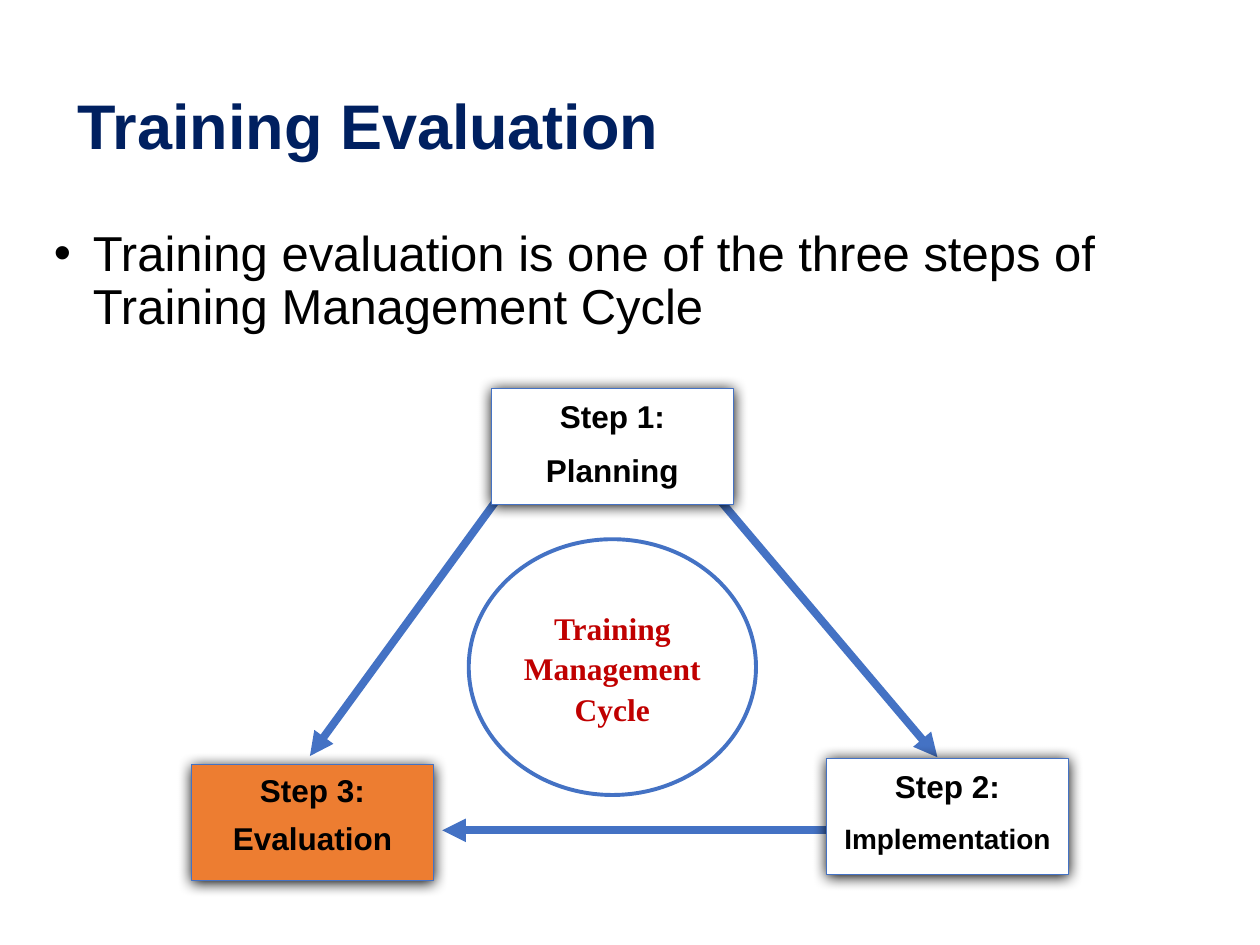
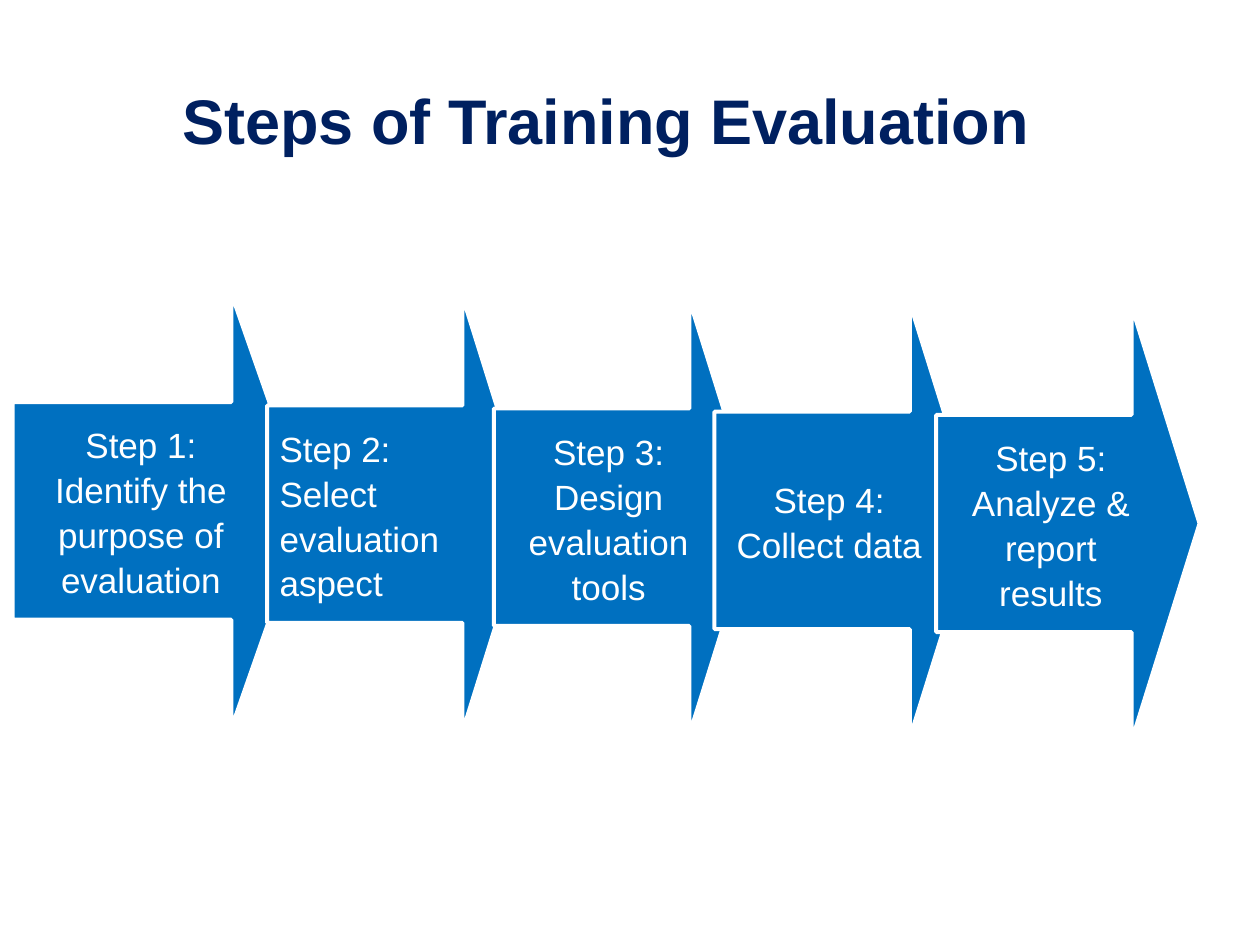
"""Build two slides on training evaluation: the management cycle and the five steps."""
import pptx
import pptx.dml.color
import pptx.enum.shapes
import pptx.enum.text
import pptx.oxml
import pptx.oxml.ns
import pptx.util
import lxml.etree

Inches = pptx.util.Inches
Pt = pptx.util.Pt
Shape = pptx.enum.shapes.MSO_SHAPE
Anchor = pptx.enum.text.MSO_ANCHOR
Align = pptx.enum.text.PP_ALIGN

COLOURS = {
    "navy": "002060", "black": "000000", "white": "FFFFFF", "line": "4472C4",
    "orange": "ED7D31", "red": "C00000", "arrow": "0070C0",
}

TITLES = [
    ("Training Evaluation", (0.52, 0.3), Align.LEFT),
    ("Steps of Training Evaluation", (0.5, 0.26), Align.CENTER),
]
TITLE_SIZE = (8.62, 1.45)
INTRO = "Training evaluation is one of the three steps of Training Management Cycle"

CYCLE_LINES = [
    ((5.68, 3.93), (7.44, 6.01)),
    ((3.97, 3.93), (2.46, 6)),
    ((6.56, 6.59), (3.51, 6.59)),
]
LOOSE = {"line_spacing": 1.07, "space_after": Pt(8)}
PLAIN = {"space_after": Pt(6)}
CYCLE_BOXES = [
    ((3.9, 3.08), "white", [("Step 1:", 18), ("Planning", 18)], LOOSE),
    ((6.56, 6.02), "white", [("Step 2:", 18), ("Implementation", 16)], LOOSE),
    ((1.52, 6.07), "orange", [("Step 3:", 18), ("Evaluation", 18)], PLAIN),
]
BOX_SIZE = (1.92, 0.92)
HUB = ("Training Management Cycle", (3.72, 4.28, 2.28, 2.03))

STEPS = [
    ("Step 1: Identify the purpose of evaluation", 0.1, 2.34, Align.CENTER),
    ("Step 2: Select evaluation aspect", 2.12, 2.09, Align.LEFT),
    ("Step 3: Design evaluation tools", 3.92, 2.09, Align.CENTER),
    ("Step 4: Collect data", 5.67, 2.09, Align.CENTER),
    ("Step 5: Analyze & report results", 7.43, 2.09, Align.CENTER),
]
ARROW_TOP, ARROW_DROP, ARROW_HEIGHT = 2.33, 0.025, 3.45
ARROW_ADJUSTMENTS = (0.5, 0.258)


def colour(name):
    return pptx.dml.color.RGBColor.from_string(COLOURS[name])


def apply(target, values):
    for name, value in values.items():
        setattr(target, name, value)


def write(shape, lines, ink, bold=False, font="Arial", anchor=Anchor.TOP, **layout):
    """Fill a shape with (text, size) lines and return the paragraphs."""
    frame = shape.text_frame
    apply(frame, {"word_wrap": True, "vertical_anchor": anchor})
    for number, (text, size) in enumerate(lines):
        para = frame.add_paragraph() if number else frame.paragraphs[0]
        apply(para, layout)
        span = para.add_run()
        span.text = text
        apply(span.font, {"name": font, "size": Pt(size), "bold": bold})
        span.font.color.rgb = colour(ink)
    return frame.paragraphs


def add_block(page, kind, place, fill, line, weight):
    block = page.shapes.add_shape(kind, *map(Inches, place))
    block.shadow.inherit = False
    block.fill.solid()
    block.fill.fore_color.rgb = colour(fill)
    block.line.color.rgb = colour(line)
    block.line.width = Pt(weight)
    return block


def add_shadow(block):
    effects = block.element.spPr.find(pptx.oxml.ns.qn("a:effectLst"))
    effects.append(pptx.oxml.parse_xml(
        f'<a:outerShdw {pptx.oxml.ns.nsdecls("a")} blurRad="{Pt(8.5)}" dist="{Pt(1)}"'
        f' dir="5400000" algn="ctr" rotWithShape="0"><a:srgbClr val="{COLOURS["black"]}"/></a:outerShdw>'))


def add_arrow_line(page, start, end):
    line = page.shapes.add_connector(
        pptx.enum.shapes.MSO_CONNECTOR.STRAIGHT, *map(Inches, start + end))
    line.line.color.rgb = colour("line")
    line.line.width = Pt(4.5)
    properties = line.element.spPr
    outline = properties.find(pptx.oxml.ns.qn("a:ln"))
    lxml.etree.SubElement(outline, pptx.oxml.ns.qn("a:tailEnd"), type="triangle")
    lxml.etree.SubElement(properties, pptx.oxml.ns.qn("a:effectLst"))


def add_page(deck, title, corner, alignment):
    page = deck.slides.add_slide(deck.slide_layouts[6])
    box = page.shapes.add_textbox(*map(Inches, corner + TITLE_SIZE))
    write(box, [(title, 36)], "navy", bold=True, anchor=Anchor.MIDDLE,
          alignment=alignment, line_spacing=0.9)
    return page


def add_intro(page):
    box = page.shapes.add_textbox(*map(Inches, (0.33, 1.77, 9, 1.17)))
    para = write(box, [(INTRO, 28)], "black", line_spacing=0.9, space_before=Pt(7.5))[0]
    properties = para._p.get_or_add_pPr()
    properties.set("marL", str(Inches(0.31)))
    properties.set("indent", str(-Inches(0.31)))
    lxml.etree.SubElement(properties, pptx.oxml.ns.qn("a:buFont"), typeface="Arial")
    lxml.etree.SubElement(properties, pptx.oxml.ns.qn("a:buChar"), char="•")


def draw_cycle(page):
    add_intro(page)
    for start, end in CYCLE_LINES:
        add_arrow_line(page, start, end)
    for corner, fill, lines, spacing in CYCLE_BOXES:
        box = add_block(page, Shape.RECTANGLE, corner + BOX_SIZE, fill, "line", 0.5)
        add_shadow(box)
        write(box, lines, "black", bold=True, alignment=Align.CENTER, **spacing)
    text, place = HUB
    hub = add_block(page, Shape.OVAL, place, "white", "line", 2.25)
    write(hub, [(text, 18)], "red", bold=True, font="Times New Roman",
          anchor=Anchor.MIDDLE, alignment=Align.CENTER, **LOOSE)


def draw_steps(page):
    for number, (text, left, width, alignment) in enumerate(STEPS):
        place = (left, ARROW_TOP + number * ARROW_DROP, width, ARROW_HEIGHT)
        arrow = add_block(page, Shape.RIGHT_ARROW, place, "arrow", "white", 2.25)
        for index, value in enumerate(ARROW_ADJUSTMENTS):
            arrow.adjustments[index] = value
        write(arrow, [(text, 20)], "white", anchor=Anchor.MIDDLE, alignment=alignment, **LOOSE)


def main():
    deck = pptx.Presentation()
    apply(deck, {"slide_width": Inches(10), "slide_height": Inches(7.5)})
    for title, draw in zip(TITLES, (draw_cycle, draw_steps)):
        draw(add_page(deck, *title))
    deck.save("out.pptx")


if __name__ == "__main__":
    main()
